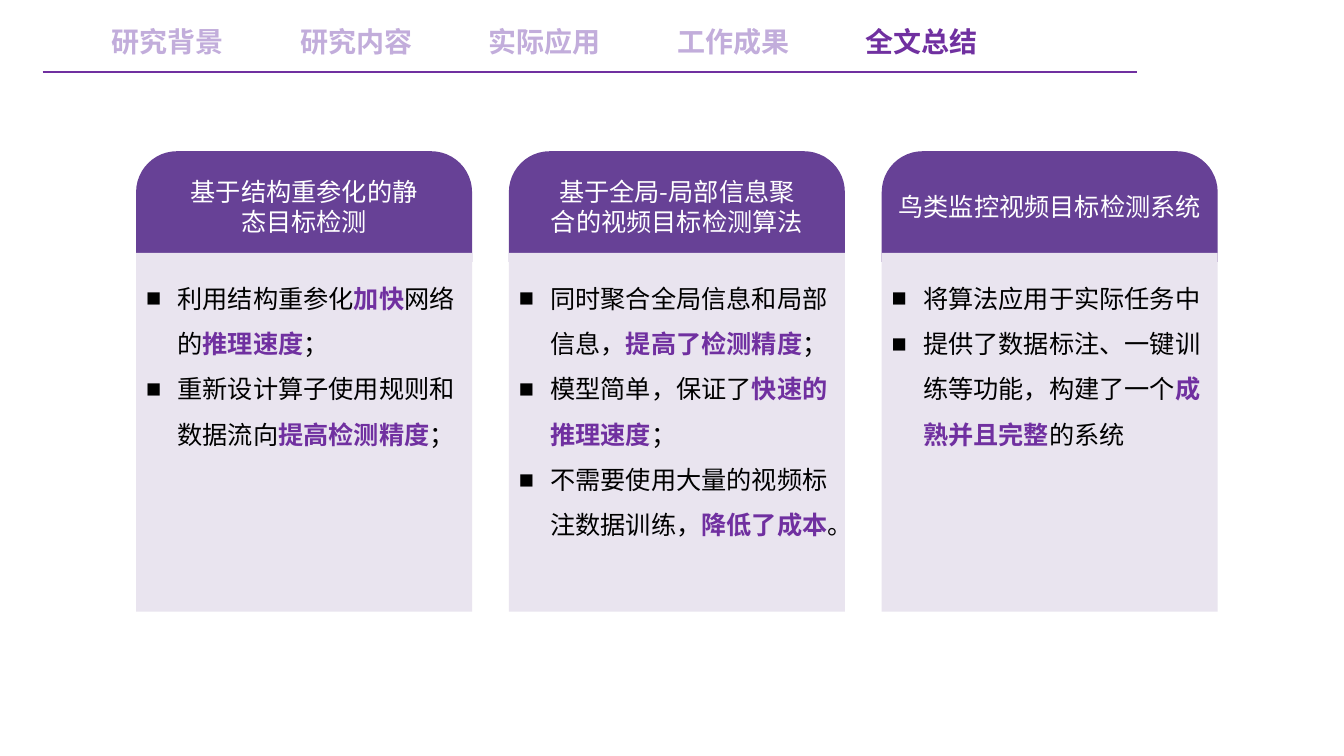
import pptx
import pptx.dml.color
import pptx.enum.shapes
import pptx.enum.text
import pptx.oxml.ns
import pptx.util
from lxml import etree

Pt = pptx.util.Pt
SHAPES = pptx.enum.shapes.MSO_SHAPE
ALIGN = pptx.enum.text.PP_ALIGN
qn = pptx.oxml.ns.qn

FONT = "Noto Sans CJK SC"
PURPLE, PALE_PURPLE = "7030A0", "C2ADDB"
HEADER_FILL, BODY_FILL = "674196", "E9E4EF"


def rgb(hex_color):
    return pptx.dml.color.RGBColor.from_string(hex_color)


def style(run, size, color, bold=False):
    """Format a run, with the font set for Latin and Chinese text alike."""
    run.font.size = Pt(size)
    run.font.bold = bold
    run.font.color.rgb = rgb(color)
    run.font.name = FONT
    etree.SubElement(run.font._element, qn("a:ea"), typeface=FONT)


presentation = pptx.Presentation()
presentation.slide_width, presentation.slide_height = Pt(960), Pt(540)
slide = presentation.slides.add_slide(presentation.slide_layouts[6])
shapes = slide.shapes

# Navigation bar
nav_rule = shapes.add_connector(
    pptx.enum.shapes.MSO_CONNECTOR.STRAIGHT, Pt(30.5), Pt(51.4), Pt(812), Pt(51.4))
nav_rule.line.color.rgb = rgb(PURPLE)
nav_rule.line.width = Pt(1)
etree.SubElement(nav_rule._element.spPr, qn("a:effectLst"))

sections = ["研究背景", "研究内容", "实际应用", "工作成果", "全文总结"]
current_section = "全文总结"
for index, section in enumerate(sections):
    tab = shapes.add_textbox(Pt(72.7 + 134.6 * index), Pt(14), Pt(95), Pt(31.5))
    tab.text_frame.word_wrap = False
    tab.text_frame.text = section
    style(tab.text_frame.paragraphs[0].runs[0], 20,
          PURPLE if section == current_section else PALE_PURPLE, bold=True)

# Summary cards: title, title top, title width, bullets of (text, emphasised) pieces
cards = [
    ("基于结构重参化的静态目标检测", 122.4, 182, [
        [("利用结构重参化", False), ("加快", True), ("网络的", False),
         ("推理速度", True), ("；", False)],
        [("重新设计算子使用规则和数据流向", False), ("提高检测精度", True), ("；", False)],
    ]),
    ("基于全局-局部信息聚合的视频目标检测算法", 122.4, 197.5, [
        [("同时聚合全局信息和局部信息，", False), ("提高了检测精度", True), ("；", False)],
        [("模型简单，保证了", False), ("快速的推理速度", True), ("；", False)],
        [("不需要使用大量的视频标注数据训练，", False), ("降低了成本", True), ("。", False)],
    ]),
    ("鸟类监控视频目标检测系统", 133.2, 238.5, [
        [("将算法应用于实际任务中", False)],
        [("提供了数据标注、一键训练等功能，构建了一个", False),
         ("成熟并且完整", True), ("的系统", False)],
    ]),
]
card_width, card_pitch = 240, 266.3
for index, (title, title_top, title_width, bullets) in enumerate(cards):
    left = 97.2 + card_pitch * index

    header = shapes.add_shape(
        SHAPES.ROUND_2_SAME_RECTANGLE, Pt(left), Pt(108), Pt(card_width), Pt(79))
    header.adjustments[0] = 0.37
    body = shapes.add_shape(
        SHAPES.RECTANGLE, Pt(left), Pt(180.7), Pt(card_width), Pt(256.3))
    for panel, fill in ((header, HEADER_FILL), (body, BODY_FILL)):
        panel.shadow.inherit = False
        panel.fill.solid()
        panel.fill.fore_color.rgb = rgb(fill)
        panel.line.fill.background()

    title_left = left + (card_width - title_width) / 2
    heading = shapes.add_textbox(Pt(title_left), Pt(title_top), Pt(title_width), Pt(51))
    heading.text_frame.word_wrap = True
    heading.text_frame.text = title
    heading.text_frame.paragraphs[0].alignment = ALIGN.CENTER
    style(heading.text_frame.paragraphs[0].runs[0], 18, "FFFFFF")

    summary = shapes.add_textbox(
        Pt(left), Pt(187.7), Pt(card_width), Pt(5 + 65 * len(bullets)))
    summary.text_frame.word_wrap = True
    for number, pieces in enumerate(bullets):
        point = (summary.text_frame.add_paragraph() if number
                 else summary.text_frame.paragraphs[0])
        point.line_spacing = 1.5
        properties = point._p.get_or_add_pPr()
        properties.set("marL", str(Pt(22.5)))
        properties.set("indent", str(-Pt(22.5)))
        etree.SubElement(properties, qn("a:buFont"), typeface="Arial")
        etree.SubElement(properties, qn("a:buChar"), char="■")
        for text, emphasised in pieces:
            run = point.add_run()
            run.text = text
            style(run, 18, PURPLE if emphasised else "000000", emphasised)

presentation.save("out.pptx")
